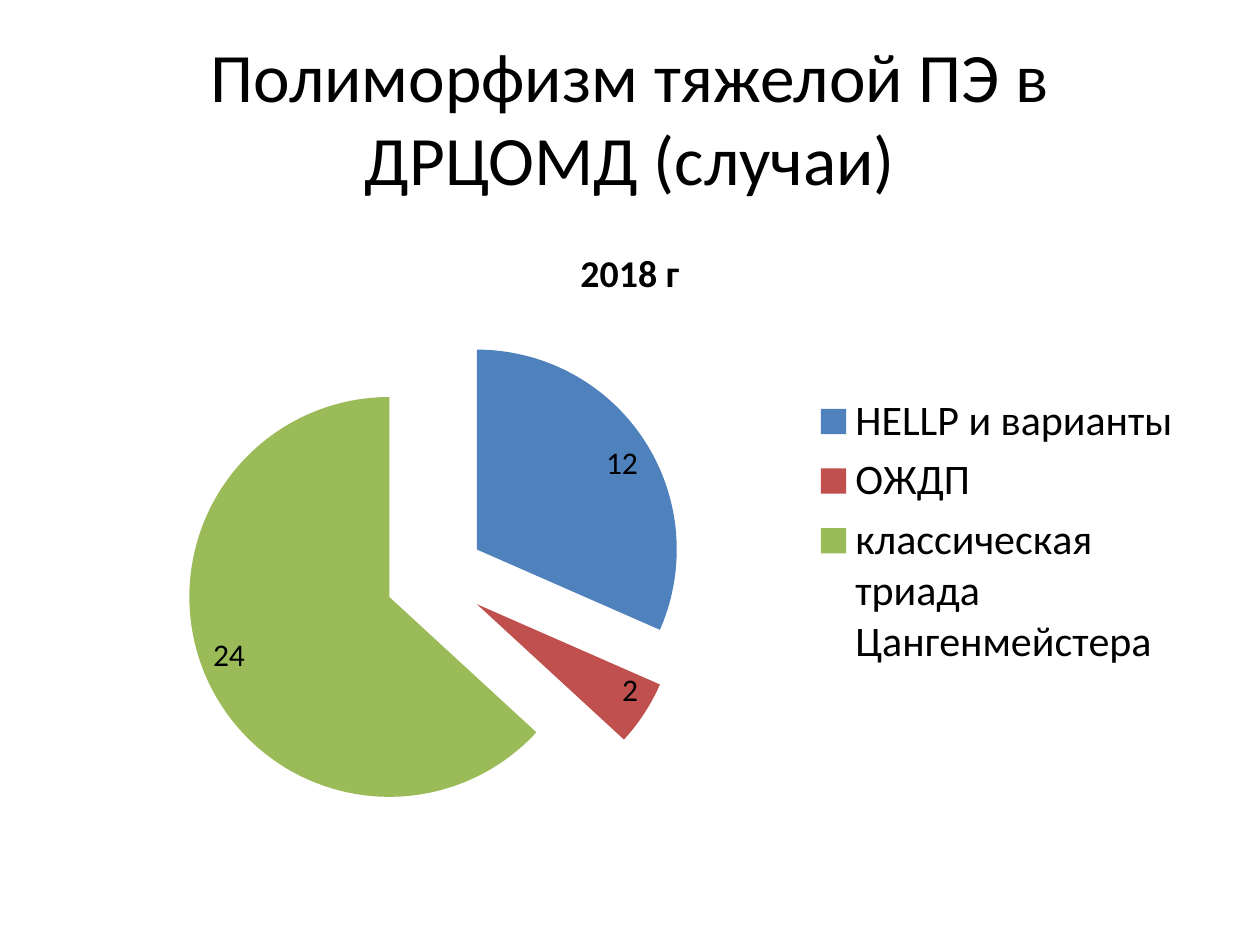
from dataclasses import dataclass

from lxml import etree
from pptx import Presentation
from pptx import util as u
from pptx.chart import data as chart_data
from pptx.dml.color import RGBColor
from pptx.enum import chart as ch, text
from pptx.oxml import ns


@dataclass(frozen=True)
class Theme:
    font: str = "Calibri"
    ink: str = "000000"
    slices: tuple = ("4F81BD", "C0504D", "9BBB59")
    title: float = 39.6
    chart_title: float = 21.6
    legend: float = 24
    label: float = 18


THEME = Theme()
CASES = {
    "HELLP и варианты": 12,
    "ОЖДП": 2,
    "классическая триада Цангенмейстера": 24,
}
EXPLOSION = 25  # percent of the pie radius


def style_font(font, size, bold=False):
    font.name = THEME.font
    font.size = u.Pt(size)
    font.bold = bold
    font.color.rgb = RGBColor.from_string(THEME.ink)


def write(frame, words, size, bold=False, align=text.PP_ALIGN.CENTER):
    paragraph = frame.paragraphs[0]
    paragraph.alignment = align
    run = paragraph.add_run()
    run.text = words
    style_font(run.font, size, bold)


def place_heading(slide, left, top, width, height):
    heading = slide.shapes.title
    heading.left, heading.top = left, top
    heading.width, heading.height = width, height
    frame = heading.text_frame
    frame.word_wrap = True
    frame.vertical_anchor = text.MSO_ANCHOR.MIDDLE
    write(frame, "Полиморфизм тяжелой ПЭ в ДРЦОМД (случаи)", THEME.title)


def place_case_pie(slide, left, top, width, height):
    cases = chart_data.CategoryChartData()
    cases.categories = list(CASES)
    cases.add_series("2018 г", list(CASES.values()))
    pie = slide.shapes.add_chart(
        ch.XL_CHART_TYPE.PIE, left, top, width, height, cases).chart
    style_font(pie.font, THEME.label)

    # Chart title and legend
    pie.has_title = True
    write(pie.chart_title.text_frame, "2018 г", THEME.chart_title, bold=True)
    pie.chart_title.include_in_layout = False
    pie.has_legend = True
    pie.legend.position = ch.XL_LEGEND_POSITION.RIGHT
    pie.legend.include_in_layout = False
    style_font(pie.legend.font, THEME.legend)

    # Slices, pulled apart
    plot = pie.plots[0]
    plot.vary_by_categories = True
    series = plot.series[0]
    for index, color in enumerate(THEME.slices):
        fill = series.points[index].format.fill
        fill.solid()
        fill.fore_color.rgb = RGBColor.from_string(color)
    explosion = etree.Element(ns.qn("c:explosion"), val=str(EXPLOSION))
    series._element.find(ns.qn("c:dPt")).addprevious(explosion)

    # Number of cases on each slice
    plot.has_data_labels = True
    labels = plot.data_labels
    labels.show_value = True
    labels.show_percentage = False
    labels.position = ch.XL_LABEL_POSITION.INSIDE_END
    style_font(labels.font, THEME.label)


def main():
    deck = Presentation()
    deck.slide_width, deck.slide_height = u.Inches(10), u.Inches(7.5)
    slide = deck.slides.add_slide(deck.slide_layouts[5])
    margin, width = u.Inches(0.5), u.Inches(9)
    place_heading(slide, margin, u.Inches(0.3), width, u.Inches(1.25))
    place_case_pie(slide, margin, u.Inches(1.75), width, u.Inches(4.95))
    deck.save("out.pptx")


if __name__ == "__main__":
    main()
